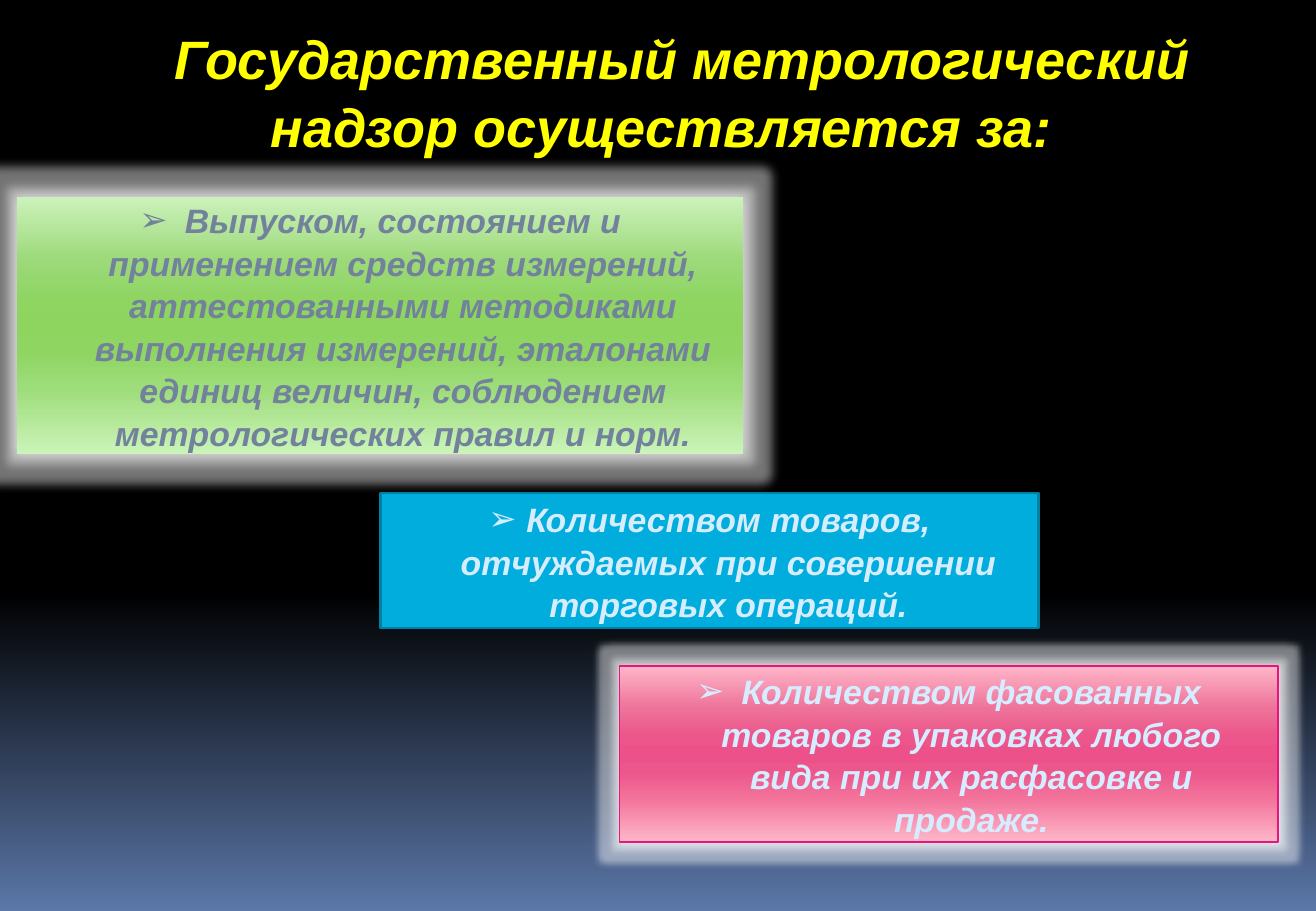
from lxml.etree import SubElement
from pptx import Presentation
from pptx.dml.color import RGBColor
from pptx.enum.shapes import MSO_SHAPE
from pptx.enum.text import MSO_ANCHOR, PP_ALIGN
from pptx.oxml.ns import qn
from pptx.util import Pt

BLACK = RGBColor(0x00, 0x00, 0x00)
WHITE = RGBColor(0xFF, 0xFF, 0xFF)
YELLOW = RGBColor(0xFF, 0xFF, 0x00)
DUSK = RGBColor(0x5B, 0x77, 0xA8)
SLATE = RGBColor(0x72, 0x82, 0x9C)
ICE = RGBColor(0xD6, 0xEC, 0xFF)
CYAN = RGBColor(0x00, 0xAD, 0xDC)
TEAL = RGBColor(0x00, 0x80, 0xA3)
MAGENTA = RGBColor(0xEA, 0x15, 0x7A)
GREENS = [RGBColor.from_string(code) for code in
          ("CCF2BB", "9CD979", "8FD562", "8DD55F", "8FD562", "9EDD7B", "CBF4B9")]
PINKS = [RGBColor.from_string(code) for code in
         ("FFB6C9", "ED7198", "EC568B", "EC5289", "EC568B", "F2729A", "FFB6C9")]
BAND_STOPS = (0, 25, 40, 50, 60, 75, 100)

TITLE = "Государственный метрологический надзор осуществляется за:"
# Text, text colour, fill, outline, halo radius, indent, (left, top, width, height)
SUBJECTS = [
    ("Выпуском, состоянием и применением средств измерений, аттестованными "
     "методиками выполнения измерений, эталонами единиц величин, соблюдением "
     "метрологических правил и норм.",
     SLATE, GREENS, None, 12, 27, (10.1, 116.6, 430.6, 152.6)),
    ("Количеством товаров, отчуждаемых при совершении торговых операций.",
     ICE, CYAN, (TEAL, 1.5), 0, 22.5, (225.4, 292.3, 390.2, 79.9)),
    ("Количеством фасованных товаров в упаковках любого вида при их "
     "расфасовке и продаже.",
     ICE, PINKS, (MAGENTA, 0.94), 8, 27, (367.2, 394.6, 390.2, 104.4)),
]


def set_values(target, values):
    for name, value in values.items():
        setattr(target, name, value)


def place(shape, left, top, width, height):
    set_values(shape, {"left": Pt(left), "top": Pt(top),
                       "width": Pt(width), "height": Pt(height)})


def add_colour(parent, colour, alpha=100):
    node = SubElement(parent, qn("a:srgbClr"), val=str(colour))
    if alpha < 100:
        SubElement(node, qn("a:alpha"), val=str(alpha * 1000))


def fill_gradient(fill, owner, stops):
    """Downward gradient with any number of (percent, colour) stops."""
    fill.gradient()
    fill.gradient_angle = 270
    stop_list = next(owner.iter(qn("a:gsLst")))
    for stop in list(stop_list):
        stop_list.remove(stop)
    for percent, colour in stops:
        stop = SubElement(stop_list, qn("a:gs"), pos=str(percent * 1000))
        add_colour(stop, colour)


def add_halo(shape, radius):
    effects = shape._element.spPr.find(qn("a:effectLst"))
    glow = SubElement(effects, qn("a:glow"), rad=str(Pt(radius)))
    add_colour(glow, WHITE, 45)
    shadow = SubElement(effects, qn("a:outerShdw"), blurRad=str(Pt(radius / 2)),
                        dist="0", dir="0", algn="ctr", rotWithShape="0")
    add_colour(shadow, WHITE, 60)


def add_bullet(para, indent):
    properties = para._p.get_or_add_pPr()
    properties.set("marL", str(Pt(indent)))
    properties.set("indent", str(-Pt(indent)))
    SubElement(properties, qn("a:buFont"), typeface="Arial")
    SubElement(properties, qn("a:buChar"), char="➢")


def write_text(box, text, size, colour, anchor):
    frame = box.text_frame
    set_values(frame, {"word_wrap": True, "vertical_anchor": anchor})
    para = frame.paragraphs[0]
    set_values(para, {"alignment": PP_ALIGN.CENTER, "line_spacing": 1.05,
                      "space_before": Pt(0)})
    span = para.add_run()
    span.text = text
    set_values(span.font, {"name": "Arial", "size": Pt(size),
                           "bold": True, "italic": True})
    span.font.color.rgb = colour
    return para


def add_title(page):
    title = page.shapes.title
    place(title, 16.6, 9.4, 751, 85)
    para = write_text(title, TITLE, 32, YELLOW, MSO_ANCHOR.TOP)
    para._p.get_or_add_pPr().set("indent", str(Pt(25)))


def add_subject(page, text, colour, fill, outline, halo, indent, position):
    box = page.shapes.add_shape(MSO_SHAPE.RECTANGLE, 0, 0, 0, 0)
    place(box, *position)
    box.shadow.inherit = False
    if isinstance(fill, list):
        fill_gradient(box.fill, box._element, zip(BAND_STOPS, fill))
    else:
        box.fill.solid()
        box.fill.fore_color.rgb = fill
    if outline:
        box.line.color.rgb, box.line.width = outline[0], Pt(outline[1])
    else:
        box.line.fill.background()
    if halo:
        add_halo(box, halo)
    para = write_text(box, text, 20, colour, MSO_ANCHOR.MIDDLE)
    add_bullet(para, indent)


def main():
    deck = Presentation()
    set_values(deck, {"slide_width": Pt(780), "slide_height": Pt(540)})
    page = deck.slides.add_slide(deck.slide_layouts[5])

    # Night sky background
    fill_gradient(page.background.fill, page._element,
                  [(0, BLACK), (65, BLACK), (100, DUSK)])

    # Heading and the three subjects of supervision
    add_title(page)
    for subject in SUBJECTS:
        add_subject(page, *subject)

    deck.save("out.pptx")


if __name__ == "__main__":
    main()
